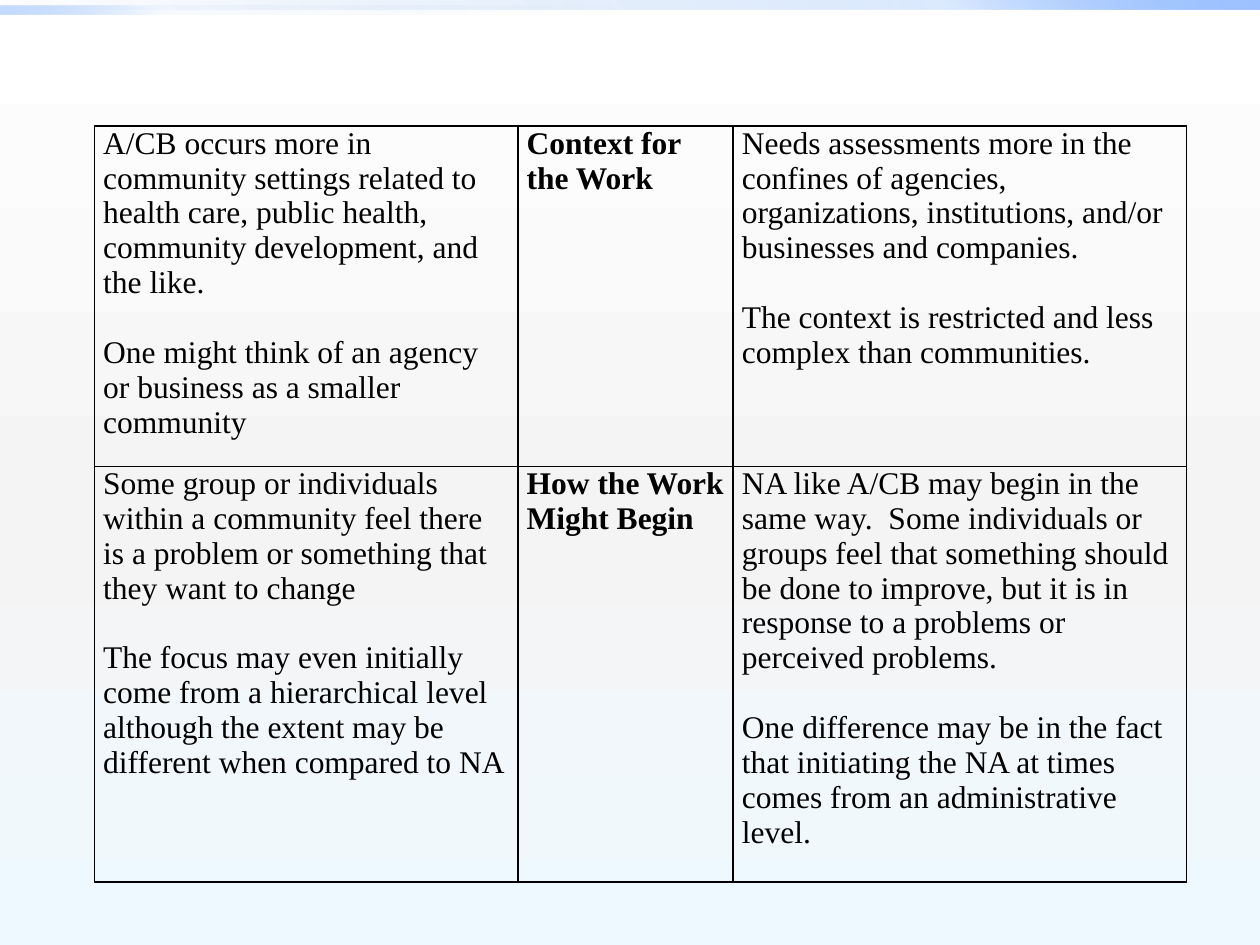
"""Build a slide with a table comparing A/CB and needs assessment."""
from lxml.etree import SubElement as Sub
from pptx import Presentation
from pptx.dml.color import RGBColor as Rgb
from pptx.enum.shapes import MSO_SHAPE as Shape
from pptx.oxml.ns import qn
from pptx.util import Pt


def tint(node, color, alpha=100):
    clr = Sub(node, qn("a:srgbClr"), val=str(Rgb.from_string(color)))
    if alpha < 100:
        Sub(clr, qn("a:alpha"), val=str(alpha * 1000))


def blend(fill, root, angle, stops):
    fill.gradient()
    fill.gradient_angle = angle
    group = next(root.iter(qn("a:gsLst")))
    for old in list(group):
        group.remove(old)
    for place, *color in stops:
        tint(Sub(group, qn("a:gs"), pos=str(place * 1000)), *color)


deck = Presentation()
deck.slide_width, deck.slide_height = Pt(720), Pt(540)
slide = deck.slides.add_slide(deck.slide_layouts[6])
blend(slide.background.fill, slide.element, 270,
      [(0, "FFFFFF"), (55, "F4F4F4"), (100, "EEF9FF")])

bars = [
    (0, 720, 45, 20, 100),
    (3, 360, 225, 5, 60),
]
for top, width, angle, mid, end in bars:
    bar = slide.shapes.add_shape(Shape.RECTANGLE, 0, Pt(top), Pt(width), Pt(5.6))
    bar.shadow.inherit = False
    bar.line.fill.background()
    blend(bar.fill, bar.element, angle,
          [(0, "0058B7", 0), (75, "4F95FF", mid), (100, "9EC2FF", end)])

rows = [
    [
        ["A/CB occurs more in community settings related to health care, "
         "public health, community development, and the like.",
         "One might think of an agency or business as a smaller community"],
        ["Context for the Work"],
        ["Needs assessments more in the confines of agencies, organizations, "
         "institutions, and/or businesses and companies.",
         "The context is restricted and less complex than communities."],
    ],
    [
        ["Some group or individuals within a community feel there is a "
         "problem or something that they want to change",
         "The focus may even initially come from a hierarchical level "
         "although the extent may be different when compared to NA"],
        ["How the Work Might Begin"],
        ["NA like A/CB may begin in the same way.  Some individuals or groups "
         "feel that something should be done to improve, but it is in "
         "response to a problems or perceived problems.",
         "One difference may be in the fact that initiating the NA at times "
         "comes from an administrative level."],
    ],
]
widths = [242, 123, 259]
heights = [194.5, 237.5]
frame = slide.shapes.add_table(2, 3, Pt(54), Pt(72), Pt(sum(widths)), Pt(sum(heights)))
table = frame.table
table.first_row = table.horz_banding = False
for col, width in zip(table.columns, widths):
    col.width = Pt(width)

for r, (row, height) in enumerate(zip(rows, heights)):
    table.rows[r].height = Pt(height)
    for c, paras in enumerate(row):
        cell = table.cell(r, c)
        cell.margin_left = cell.margin_right = Pt(5)
        cell.margin_top = cell.margin_bottom = 0
        props = cell._tc.get_or_add_tcPr()
        for side in "LRTB":
            edge = Sub(props, qn("a:ln" + side), w=str(Pt(1)))
            tint(Sub(edge, qn("a:solidFill")), "000000")
        cell.fill.background()
        for i, text in enumerate(paras):
            body = cell.text_frame
            para = body.add_paragraph() if i else body.paragraphs[0]
            if i:
                para.space_before = Pt(20)
            run = para.add_run()
            run.text = text
            run.font.name = "Times New Roman"
            run.font.size = Pt(18)
            run.font.bold = c == 1
            run.font.color.rgb = Rgb.from_string("000000")

deck.save("out.pptx")
